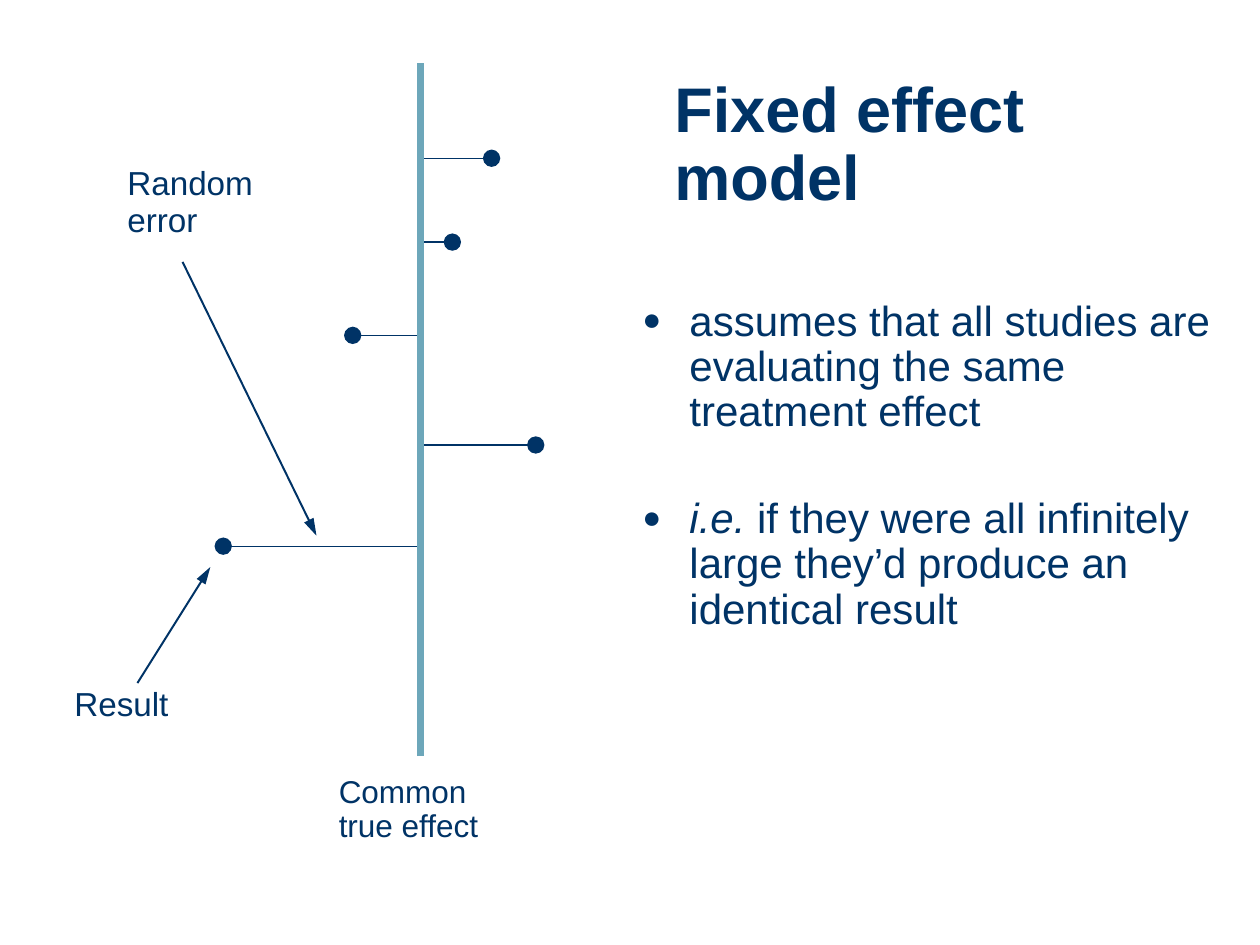
from dataclasses import dataclass

from lxml import etree
from pptx import Presentation
from pptx.dml.color import RGBColor
from pptx.enum.shapes import MSO_CONNECTOR
from pptx.enum.text import MSO_ANCHOR, MSO_AUTO_SIZE, PP_ALIGN
from pptx.oxml.ns import qn
from pptx.util import Cm, Pt

LINE = MSO_CONNECTOR.STRAIGHT
BOTTOM = MSO_ANCHOR.BOTTOM
LEFT = PP_ALIGN.LEFT
GROW = MSO_AUTO_SIZE.SHAPE_TO_FIT_TEXT
FIXED = MSO_AUTO_SIZE.NONE
HUES = {"navy": "003366", "teal": "6DA7BA", "white": "FFFFFF"}
FONT = "Arial"
AXIS = 8.48


@dataclass
class Study:
    y: float
    end: float


@dataclass
class Arrow:
    start: tuple[float, float]
    end: tuple[float, float]


@dataclass
class Label:
    text: str
    x: float
    y: float
    width: float
    height: float = 0.81
    size: int = 19
    pad: bool = False


STUDIES = [Study(3.19, 9.91), Study(4.88, 9.12), Study(6.76, 7.11),
           Study(8.97, 10.8), Study(11.01, 4.5)]
ARROWS = [Arrow((3.68, 5.28), (6.38, 10.8)),
          Arrow((2.77, 13.77), (4.24, 11.43))]
LABELS = [Label("Random", 2.57, 3.28, 2.57),
          Label("error", 2.57, 4.01, 1.45),
          Label("Result", 1.5, 13.77, 1.93),
          Label("Common", 6.58, 15.44, 3.81, 1.02, 18, True),
          Label("true effect", 6.58, 16.13, 3.81, 1.02, 18, True)]
# Each point is a list of (text, italic) runs
POINTS = [
    [("assumes that all studies are evaluating the same treatment effect",
      False)],
    [("i.e.", True),
     (" if they were all infinitely large they’d produce an identical result",
      False)],
]


def hue(name: str) -> RGBColor:
    return RGBColor.from_string(HUES[name])


def add_run(para, text: str, size: int, bold=False, slant=False) -> None:
    run = para.add_run()
    run.text = text
    font = run.font
    font.name, font.size = FONT, Pt(size)
    font.bold, font.italic = bold, slant
    font.color.rgb = hue("navy")


def add_line(slide, start, end, width: float, color="navy", tip=None,
             girth="med") -> None:
    line = slide.shapes.add_connector(LINE, *map(Cm, (*start, *end)))
    line.line.width = Pt(width)
    line.line.color.rgb = hue(color)
    if tip:
        etree.SubElement(line.line._get_or_add_ln(), qn("a:tailEnd"),
                         type=tip, w=girth, len="lg")
    etree.SubElement(line._element.spPr, qn("a:effectLst"))


def add_label(slide, label: Label) -> None:
    box = slide.shapes.add_textbox(Cm(label.x), Cm(label.y),
                                   Cm(label.width), Cm(label.height))
    frame = box.text_frame
    frame.word_wrap = label.pad
    frame.auto_size = GROW
    if not label.pad:
        frame.margin_left = frame.margin_right = 0
        frame.margin_top = frame.margin_bottom = 0
    add_run(frame.paragraphs[0], label.text, label.size)


def set_bullet(para) -> None:
    props = para._p.get_or_add_pPr()
    props.set("marL", str(Cm(0.95)))
    props.set("indent", str(-Cm(0.95)))
    color = etree.SubElement(props, qn("a:buClr"))
    etree.SubElement(color, qn("a:srgbClr"), val=HUES["navy"])
    etree.SubElement(props, qn("a:buSzPct"), val="75000")
    etree.SubElement(props, qn("a:buFont"), typeface=FONT)
    etree.SubElement(props, qn("a:buChar"), char="●")


def add_title(slide) -> None:
    title = slide.shapes.title
    title.left, title.top = Cm(13.34), Cm(1.47)
    title.width, title.height = Cm(11.15), Cm(2.97)
    frame = title.text_frame
    frame.word_wrap = True
    frame.auto_size = FIXED
    frame.vertical_anchor = BOTTOM
    para = frame.paragraphs[0]
    para.alignment = LEFT
    para.line_spacing = 0.9
    add_run(para, "Fixed effect model", 36, bold=True)


def add_points(slide) -> None:
    box = slide.shapes.add_textbox(Cm(12.7), Cm(5.92), Cm(12.6), Cm(10.36))
    frame = box.text_frame
    frame.word_wrap = True
    for i, runs in enumerate(POINTS):
        para = frame.add_paragraph() if i else frame.paragraphs[0]
        set_bullet(para)
        para.line_spacing = 0.9
        if i:
            para.space_before = Pt(35)
        for text, slant in runs:
            add_run(para, text, 24, slant=slant)


def main() -> None:
    deck = Presentation()
    deck.slide_width, deck.slide_height = Cm(25.4), Cm(19.05)
    slide = deck.slides.add_slide(deck.slide_layouts[5])
    slide.background.fill.solid()
    slide.background.fill.fore_color.rgb = hue("white")

    # Title and bullet points
    add_title(slide)
    add_points(slide)

    # Study results around the true effect
    for study in STUDIES:
        add_line(slide, (AXIS, study.y), (study.end, study.y), 0.75,
                 tip="oval", girth="lg")
    add_line(slide, (AXIS, 15.24), (AXIS, 1.27), 4, "teal")

    # Labels and their arrows
    for arrow in ARROWS:
        add_line(slide, arrow.start, arrow.end, 1.13, tip="triangle")
    for label in LABELS:
        add_label(slide, label)

    deck.save("out.pptx")


if __name__ == "__main__":
    main()
